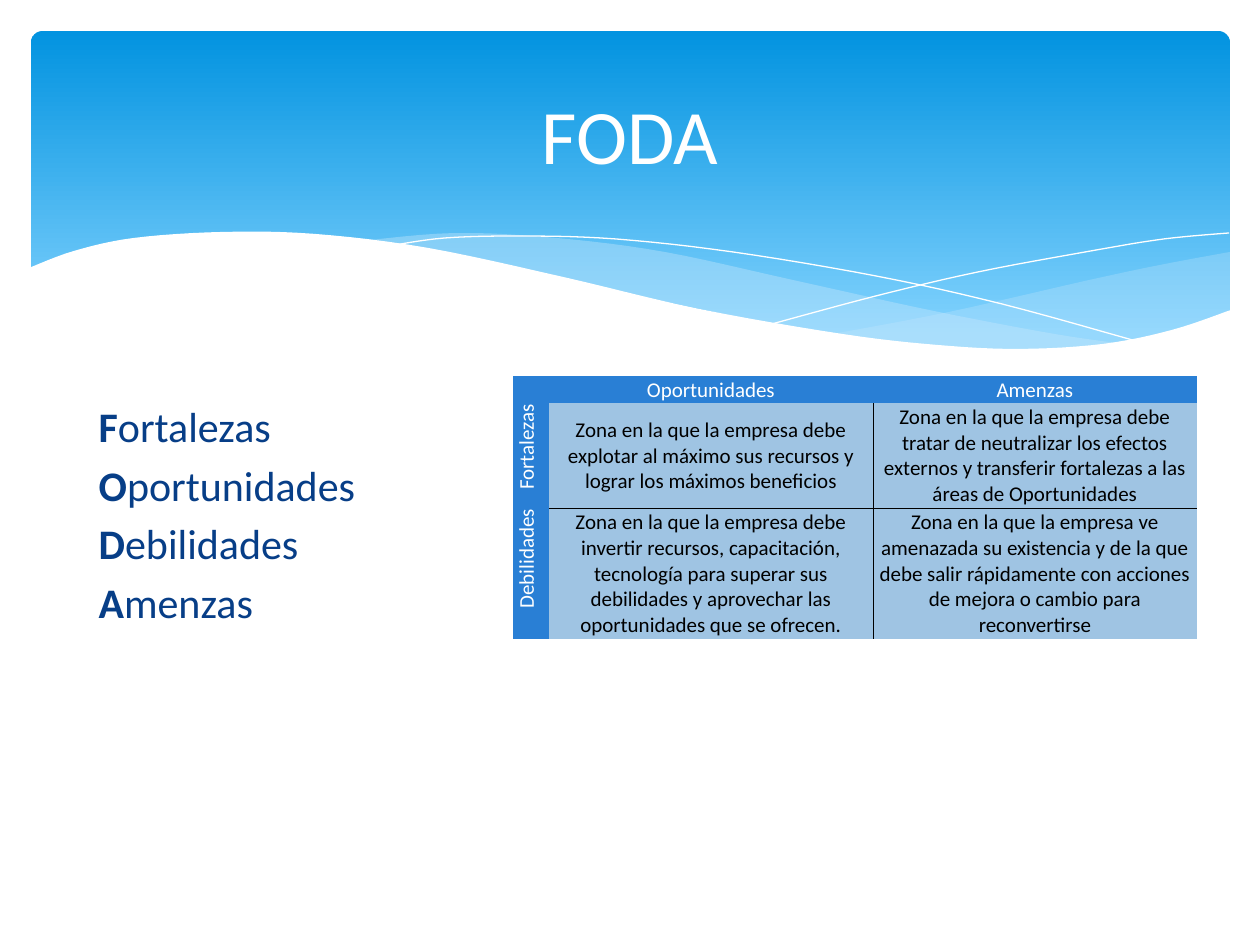
from lxml.etree import SubElement
from pptx import Presentation
from pptx.dml.color import RGBColor
from pptx.enum.shapes import MSO_SHAPE
from pptx.enum.text import MSO_ANCHOR, MSO_AUTO_SIZE, PP_ALIGN
from pptx.oxml.ns import qn
from pptx.util import Pt

EMU = 914400 / 126
HUES = {"deep": "0293E0", "sky": "83D3FE", "mist": "C6E7FC", "white": "FFFFFF",
        "navy": "073E87", "head": "297FD5", "cell": "9FC4E3", "black": "000000"}
PLAIN = "{2D5ABB26-0587-4C30-8999-92F81FD0307C}"

SWELL = [
    [(802, 303), (918, 281), (1054, 250), (1129, 234), (1199, 221)],
    [(1199, 280), (1147, 299), (1089, 312), (1007, 318), (908, 316), (802, 303)],
]
CREST = [
    [(329, 210), (424, 202), (526, 207), (634, 221), (762, 249), (903, 280),
     (1024, 303), (1094, 313)],
    [(1094, 313), (1012, 319), (911, 317), (788, 302), (637, 271), (535, 249),
     (425, 225), (329, 210)],
]
FALL = [[(358, 215), (414, 207), (493, 205), (585, 208), (702, 221), (845, 245),
         (971, 273), (1112, 312)]]
RISE = [[(741, 293), (845, 265), (947, 241), (1060, 220), (1133, 208), (1198, 202)]]
FRONT = [
    [(-2, 237), (43, 220), (103, 207), (192, 201), (284, 203), (397, 217),
     (532, 246), (668, 278), (811, 303), (906, 314), (988, 318), (1072, 313),
     (1141, 299), (1200, 279)],
    [(1200, 383), (-2, 383)],
]
WORDS = ["Fortalezas", "Oportunidades", "Debilidades", "Amenzas"]
GRID = [
    ["", "Oportunidades", "Amenzas"],
    ["Fortalezas",
     "Zona en la que la empresa debe explotar al máximo sus recursos y lograr "
     "los máximos beneficios",
     "Zona en la que la empresa debe tratar de neutralizar los efectos externos "
     "y transferir fortalezas a las áreas de Oportunidades"],
    ["Debilidades",
     "Zona en la que la empresa debe invertir recursos, capacitación, tecnología "
     "para superar sus debilidades y aprovechar las oportunidades que se ofrecen.",
     "Zona en la que la empresa ve amenazada su existencia y de la que debe salir "
     "rápidamente con acciones de mejora o cambio para reconvertirse"],
]


def px(num):
    """Turn pixels into EMU."""
    return round(num * EMU)


def hue(name):
    """Look up a colour by name."""
    return RGBColor.from_string(HUES[name])


def write(par, text, size=12, color="black", bold=False, align=None):
    """Add a formatted run to a paragraph."""
    par.alignment = align
    if not text:
        par._p.get_or_add_endParaRPr().set("sz", str(size * 100))
        return
    run = par.add_run()
    run.text = text
    font = run.font
    font.name, font.size, font.bold = "Calibri", Pt(size), bold
    font.color.rgb = hue(color)


def smooth(dots, steps=6):
    """Trace a Catmull-Rom curve through the dots."""
    ends = [dots[0], *dots, dots[-1]]
    line = [dots[0]]
    for a, b, c, d in zip(ends, ends[1:], ends[2:], ends[3:]):
        for step in range(1, steps + 1):
            t = step / steps
            line.append(tuple(
                (2 * q + (r - p) * t + (2 * p - 5 * q + 4 * r - s) * t ** 2
                 + (3 * q - p - 3 * r + s) * t ** 3) / 2
                for p, q, r, s in zip(a, b, c, d)))
    return line


def wave(slide, box, curves, fill=None, alpha=100):
    """Draw a filled wave, or a white hairline when there is no fill."""
    dots = [(px(box[0] + x), px(box[1] + y))
            for curve in curves for x, y in smooth(curve)]
    pen = slide.shapes.build_freeform(*dots[0])
    pen.add_line_segments(dots[1:], close=bool(fill))
    shape = pen.convert_to_shape()
    shape.shadow.inherit = False
    if not fill:
        shape.fill.background()
        shape.line.color.rgb = hue("white")
        shape.line.width = 0
        return
    shape.line.fill.background()
    shape.fill.solid()
    shape.fill.fore_color.rgb = hue(fill)
    if alpha < 100:
        tint = shape._element.spPr.find(".//" + qn("a:srgbClr"))
        SubElement(tint, qn("a:alpha"), val=str(alpha * 1000))


def banner(slide, box):
    """Draw the gradient band and its waves."""
    band = slide.shapes.add_shape(MSO_SHAPE.ROUNDED_RECTANGLE, *map(px, box))
    band.adjustments[0] = 0.034
    band.shadow.inherit = False
    band.line.fill.background()
    band.fill.gradient()
    band.fill.gradient_angle = 270
    for stop, name, at in zip(band.fill.gradient_stops, ("deep", "sky"), (0, 0.9)):
        stop.color.rgb = hue(name)
        stop.position = at
    wave(slide, box, SWELL, "mist", 29)
    wave(slide, box, CREST, "mist", 40)
    wave(slide, box, FALL)
    wave(slide, box, RISE)
    wave(slide, box, FRONT, "white")


def settle(slide, holder, box):
    """Move a placeholder into its box, in front of the banner."""
    holder.left, holder.top, holder.width, holder.height = map(px, box)
    slide.shapes._spTree.append(holder._element)
    holder.text_frame.auto_size = MSO_AUTO_SIZE.NONE
    return holder.text_frame


def title(slide, box):
    """Fill in the title."""
    frame = settle(slide, slide.shapes.title, box)
    frame.vertical_anchor = MSO_ANCHOR.MIDDLE
    write(frame.paragraphs[0], "FODA", size=44, color="white", align=PP_ALIGN.CENTER)


def body(slide, box):
    """List the four words with bold initials."""
    frame = settle(slide, slide.placeholders[1], box)
    for num, word in enumerate(WORDS):
        par = frame.add_paragraph() if num else frame.paragraphs[0]
        props = par._p.get_or_add_pPr()
        props.set("marL", "0")
        props.set("indent", "0")
        SubElement(props, qn("a:buNone"))
        write(par, word[0], size=24, color="navy", bold=True)
        write(par, word[1:], size=24, color="navy")


def edge(cell, side):
    """Rule one side of a cell in black."""
    line = SubElement(cell._tc.get_or_add_tcPr(), qn("a:ln" + side), w=str(Pt(0.5)))
    SubElement(SubElement(line, qn("a:solidFill")), qn("a:srgbClr"), val=HUES["black"])


def matrix(slide, box):
    """Build the table that crosses the four words."""
    table = slide.shapes.add_table(3, 3, *map(px, box)).table
    table.first_row = table.horz_banding = False
    table._tbl.tblPr.find(qn("a:tableStyleId")).text = PLAIN
    for col, wide in zip(table.columns, (36, 324, 324)):
        col.width = px(wide)
    for row, high in zip(table.rows, (27, 105, 131)):
        row.height = px(high)
    for r, texts in enumerate(GRID):
        for c, text in enumerate(texts):
            cell = table.cell(r, c)
            cell.margin_left = cell.margin_right = cell.margin_top = px(1)
            cell.margin_bottom = 0
            cell.vertical_anchor = MSO_ANCHOR.MIDDLE if r else MSO_ANCHOR.BOTTOM
            inner = r and c
            if inner:
                for side in ("R" if c == 1 else "L", "B" if r == 1 else "T"):
                    edge(cell, side)
            elif r:
                cell._tc.get_or_add_tcPr().set("vert", "vert270")
            cell.fill.solid()
            cell.fill.fore_color.rgb = hue("cell" if inner else "head")
            write(cell.text_frame.paragraphs[0], text,
                  color="black" if inner else "white",
                  align=PP_ALIGN.CENTER if c else PP_ALIGN.RIGHT)


def main():
    """Build the slide and save it."""
    deck = Presentation()
    deck.slide_width, deck.slide_height = px(1260), px(945)
    slide = deck.slides.add_slide(deck.slide_layouts[1])
    banner(slide, (31, 31, 1199, 340))
    body(slide, (86, 394, 674, 244))
    title(slide, (63, 47, 1134, 173))
    matrix(slide, (513, 376, 684, 263))
    deck.save("out.pptx")


if __name__ == "__main__":
    main()
